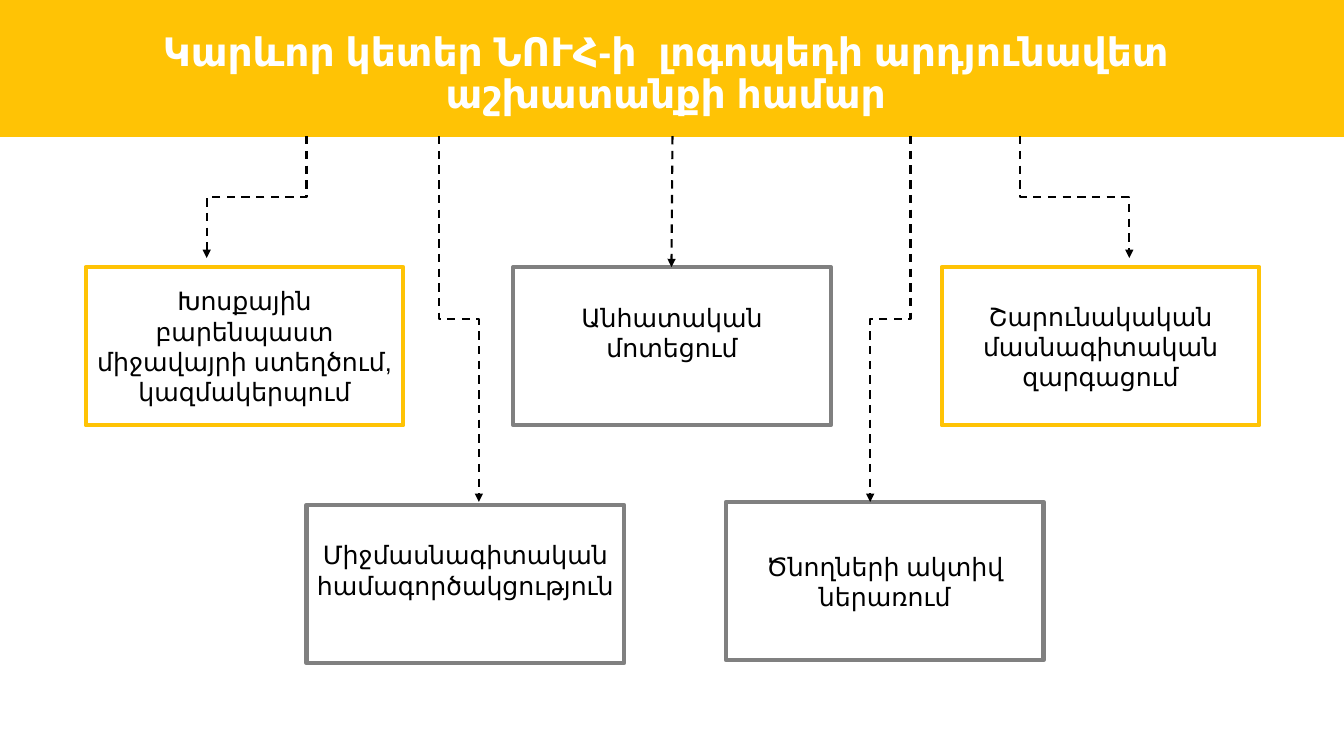
from lxml import etree
from pptx import Presentation
from pptx.dml.color import RGBColor
from pptx.enum.dml import MSO_LINE_DASH_STYLE as DASH
from pptx.enum.shapes import MSO_CONNECTOR as CONN, MSO_SHAPE as SHAPE
from pptx.enum.text import MSO_ANCHOR as ANCHOR, MSO_AUTO_SIZE as AUTO, PP_ALIGN as ALIGN
from pptx.oxml.ns import qn
from pptx.util import Inches, Pt

YELLOW = RGBColor(0xFF, 0xC3, 0x05)
GRAY = RGBColor(0x80, 0x80, 0x80)
WHITE = RGBColor(0xFF, 0xFF, 0xFF)
BLACK = RGBColor(0, 0, 0)

# Content
TITLE = "Կարևոր կետեր ՆՈՒՀ-ի  լոգոպեդի արդյունավետ աշխատանքի համար"
BOX_W, BOX_H = 3.15, 1.57
UPPER_Y = 2.65
BAND_BOTTOM = 1.35
BOXES = [  # text, left, top, outline, bottom inset
    ("Խոսքային բարենպաստ միջավայրի ստեղծում, կազմակերպում", 0.85, UPPER_Y, YELLOW, 0.05),
    ("Անհատական մոտեցում", 5.09, UPPER_Y, GRAY, 0.33),
    ("Շարունակական մասնագիտական զարգացում", 9.34, UPPER_Y, YELLOW, 0.05),
    ("Միջմասնագիտական համագործակցություն", 3.04, 5.01, GRAY, 0.33),
    ("Ծնողների ակտիվ ներառում", 7.2, 4.98, GRAY, 0.05),
]
ELBOWS = [  # start x, end x, end y
    (3.04, 2.05, 2.56),
    (10.12, 11.2, 2.56),
    (4.35, 4.75, 4.98),
    (9.03, 8.63, 4.98),
]
TITLE_FONT = {"name": "Arial", "size": Pt(28), "bold": True}
BOX_FONT = {"name": "Arial", "size": Pt(18)}


def write(tf, text, font, color):
    tf.word_wrap = True
    p = tf.paragraphs[0]
    p.alignment = ALIGN.CENTER
    r = p.add_run()
    r.text = text
    for key, value in font.items():
        setattr(r.font, key, value)
    r.font.color.rgb = color
    return p


def add_rect(x, y, w, h, fill, line, weight):
    sp = slide.shapes.add_shape(SHAPE.RECTANGLE, Inches(x), Inches(y), Inches(w), Inches(h))
    sp.shadow.inherit = False
    sp.fill.solid()
    sp.fill.fore_color.rgb = fill
    sp.line.color.rgb = line
    sp.line.width = Pt(weight)
    return sp


def add_arrow(kind, x1, y1, x2, y2):
    cx = slide.shapes.add_connector(kind, Inches(x1), Inches(y1), Inches(x2), Inches(y2))
    cx.line.color.rgb = BLACK
    cx.line.width = Pt(1.5)
    cx.line.dash_style = DASH.DASH
    ln = cx.line._get_or_add_ln()
    etree.SubElement(ln, qn("a:tailEnd"), type="triangle")
    etree.SubElement(cx._element.spPr, qn("a:effectLst"))
    return cx


def add_elbow(x1, y1, x2, y2):
    """Vertical-first elbow: a horizontal one turned about its centre."""
    mid_x, mid_y = (x1 + x2) / 2, (y1 + y2) / 2
    half_w, half_h = (y2 - y1) / 2, abs(x2 - x1) / 2
    side = 1 if x2 > x1 else -1
    cx = add_arrow(CONN.ELBOW, mid_x + side * half_w, mid_y - half_h,
                   mid_x - side * half_w, mid_y + half_h)
    angle = 270 if side > 0 else 90
    cx._element.spPr.find(qn("a:xfrm")).set("rot", str(angle * 60000))


prs = Presentation()
prs.slide_width, prs.slide_height = Inches(13.33), Inches(7.5)
slide = prs.slides.add_slide(prs.slide_layouts[5])

# Title band, placed behind the title
band = add_rect(0, -0.02, 13.33, 1.37, YELLOW, YELLOW, 1)
slide.shapes._spTree.insert(2, band._element)

# Title
title = slide.shapes.title
title.left, title.top = Inches(0.68), Inches(0.27)
title.width, title.height = Inches(11.85), Inches(0.79)
tf = title.text_frame
tf.auto_size = AUTO.NONE
tf.vertical_anchor = ANCHOR.TOP
p = write(tf, TITLE, TITLE_FONT, WHITE)
p.line_spacing = 0.9
p.space_before = Pt(10)

# Boxes
for text, x, y, outline, inset in BOXES:
    tf = add_rect(x, y, BOX_W, BOX_H, WHITE, outline, 3).text_frame
    tf.vertical_anchor = ANCHOR.MIDDLE
    tf.margin_bottom = Inches(inset)
    write(tf, text, BOX_FONT, BLACK)

# Arrows from the band
for x1, x2, y2 in ELBOWS:
    add_elbow(x1, BAND_BOTTOM, x2, y2)
add_arrow(CONN.STRAIGHT, 6.67, BAND_BOTTOM, 6.66, UPPER_Y)

prs.save("out.pptx")
